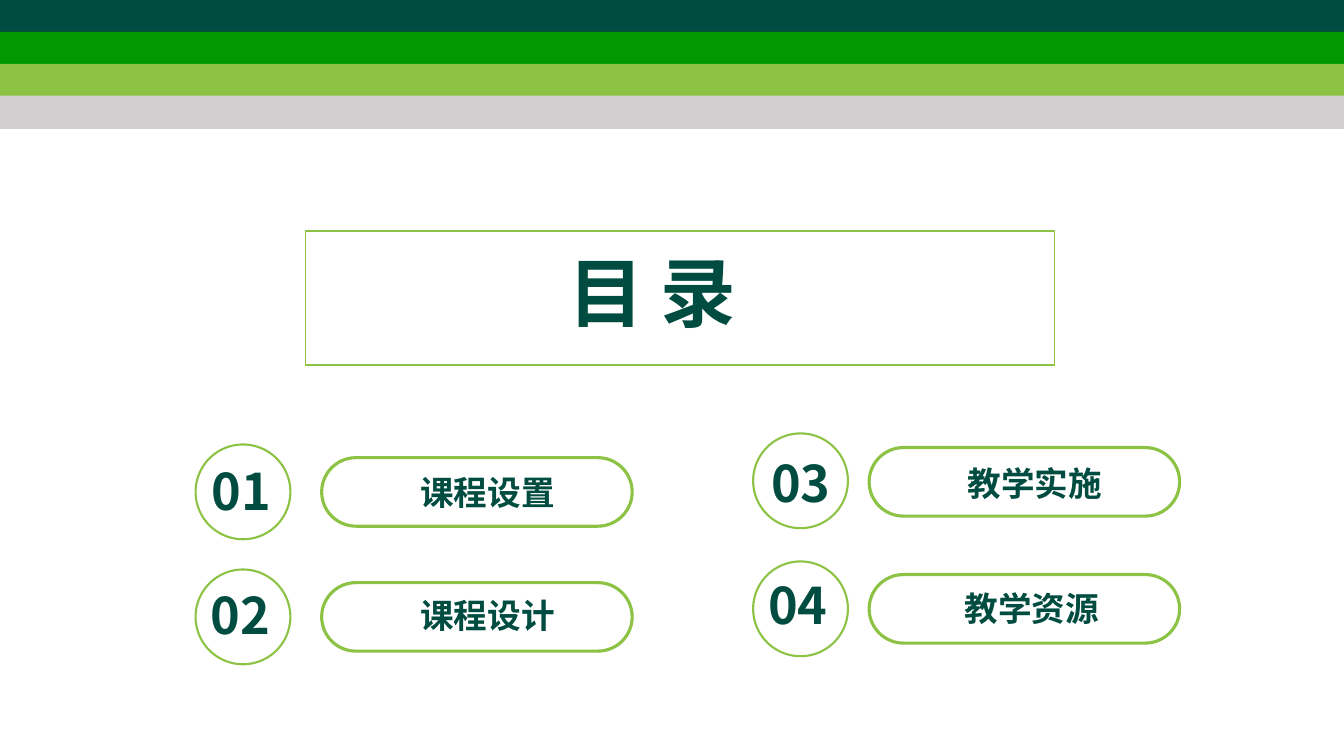
from dataclasses import dataclass

from lxml.etree import SubElement
from pptx import Presentation
from pptx.dml.color import RGBColor
from pptx.enum.shapes import MSO_SHAPE as Preset
from pptx.enum.text import MSO_AUTO_SIZE as AutoSize, PP_ALIGN as Align
from pptx.oxml.ns import qn
from pptx.shapes.autoshape import Shape
from pptx.slide import Slide
from pptx.util import Inches, Pt

COLORS = {"dark": "004C40", "green": "009A00", "lime": "8CC344", "gray": "D0CECF"}
FONT = "Noto Sans CJK SC"
PAGE_WIDTH, PAGE_HEIGHT = 13.33, 7.5
BAND_HEIGHT, BAND_STEP = 0.33, 0.95 / 3
CIRCLE_SIZE = 0.94
PILL_WIDTH, PILL_HEIGHT = 3.08, 0.68


@dataclass(frozen=True)
class Point:
    left: float
    top: float


@dataclass(frozen=True)
class Chapter:
    number: str
    title: str
    circle: Point
    pill: Point
    number_at: Point
    title_at: Point


CHAPTERS = [
    Chapter("01", "课程设置", Point(1.94, 4.41), Point(3.19, 4.54), Point(2.0, 4.52), Point(4.07, 4.63)),
    Chapter("02", "课程设计", Point(1.94, 5.65), Point(3.19, 5.78), Point(1.99, 5.75), Point(4.07, 5.85)),
    Chapter("03", "教学实施", Point(7.47, 4.3), Point(8.62, 4.44), Point(7.55, 4.44), Point(9.5, 4.54)),
    Chapter("04", "教学资源", Point(7.47, 5.57), Point(8.62, 5.7), Point(7.52, 5.65), Point(9.47, 5.78)),
]


def color(name: str) -> RGBColor:
    return RGBColor.from_string(COLORS[name])


def add_plain_shape(page: Slide, preset: Preset, at: Point, width: float, height: float) -> Shape:
    shape = page.shapes.add_shape(
        preset, Inches(at.left), Inches(at.top), Inches(width), Inches(height))
    shape.shadow.inherit = False
    return shape


def add_outline(page: Slide, preset: Preset, at: Point, width: float, height: float,
                line_width: float) -> Shape:
    shape = add_plain_shape(page, preset, at, width, height)
    shape.fill.background()
    shape.line.color.rgb = color("lime")
    shape.line.width = Pt(line_width)
    return shape


def add_band(page: Slide, index: int, color_name: str) -> None:
    band = add_plain_shape(page, Preset.RECTANGLE, Point(0, index * BAND_STEP), PAGE_WIDTH, BAND_HEIGHT)
    band.fill.solid()
    band.fill.fore_color.rgb = color(color_name)
    band.line.fill.background()


def add_label(page: Slide, text: str, at: Point, width: float, height: float,
              size: float, align: Align = Align.LEFT) -> None:
    box = page.shapes.add_textbox(
        Inches(at.left), Inches(at.top), Inches(width), Inches(height))
    frame = box.text_frame
    frame.word_wrap = False
    frame.auto_size = AutoSize.SHAPE_TO_FIT_TEXT
    para = frame.paragraphs[0]
    para.alignment = align
    span = para.add_run()
    span.text = text
    for name, value in {"name": FONT, "size": Pt(size), "bold": True}.items():
        setattr(span.font, name, value)
    span.font.color.rgb = color("dark")
    SubElement(span.font._element, qn("a:ea"), typeface=FONT)


def add_chapter(page: Slide, chapter: Chapter) -> None:
    pill = add_outline(page, Preset.ROUNDED_RECTANGLE, chapter.pill, PILL_WIDTH, PILL_HEIGHT, 2.25)
    pill.adjustments[0] = 0.5
    add_label(page, chapter.title, chapter.title_at, 1.55, 0.5, 24)
    add_outline(page, Preset.OVAL, chapter.circle, CIRCLE_SIZE, CIRCLE_SIZE, 1.5)
    add_label(page, chapter.number, chapter.number_at, 0.83, 0.71, 36)


def main() -> None:
    deck = Presentation()
    deck.slide_width, deck.slide_height = Inches(PAGE_WIDTH), Inches(PAGE_HEIGHT)
    page = deck.slides.add_slide(deck.slide_layouts[6])
    for chapter in CHAPTERS:
        add_chapter(page, chapter)
    for index, color_name in enumerate(COLORS):
        add_band(page, index, color_name)
    add_outline(page, Preset.RECTANGLE, Point(3.03, 2.29), 7.43, 1.33, 1)
    add_label(page, "目 录", Point(5.5, 2.39), 1.94, 1.01, 54, Align.CENTER)
    deck.save("out.pptx")


if __name__ == "__main__":
    main()
